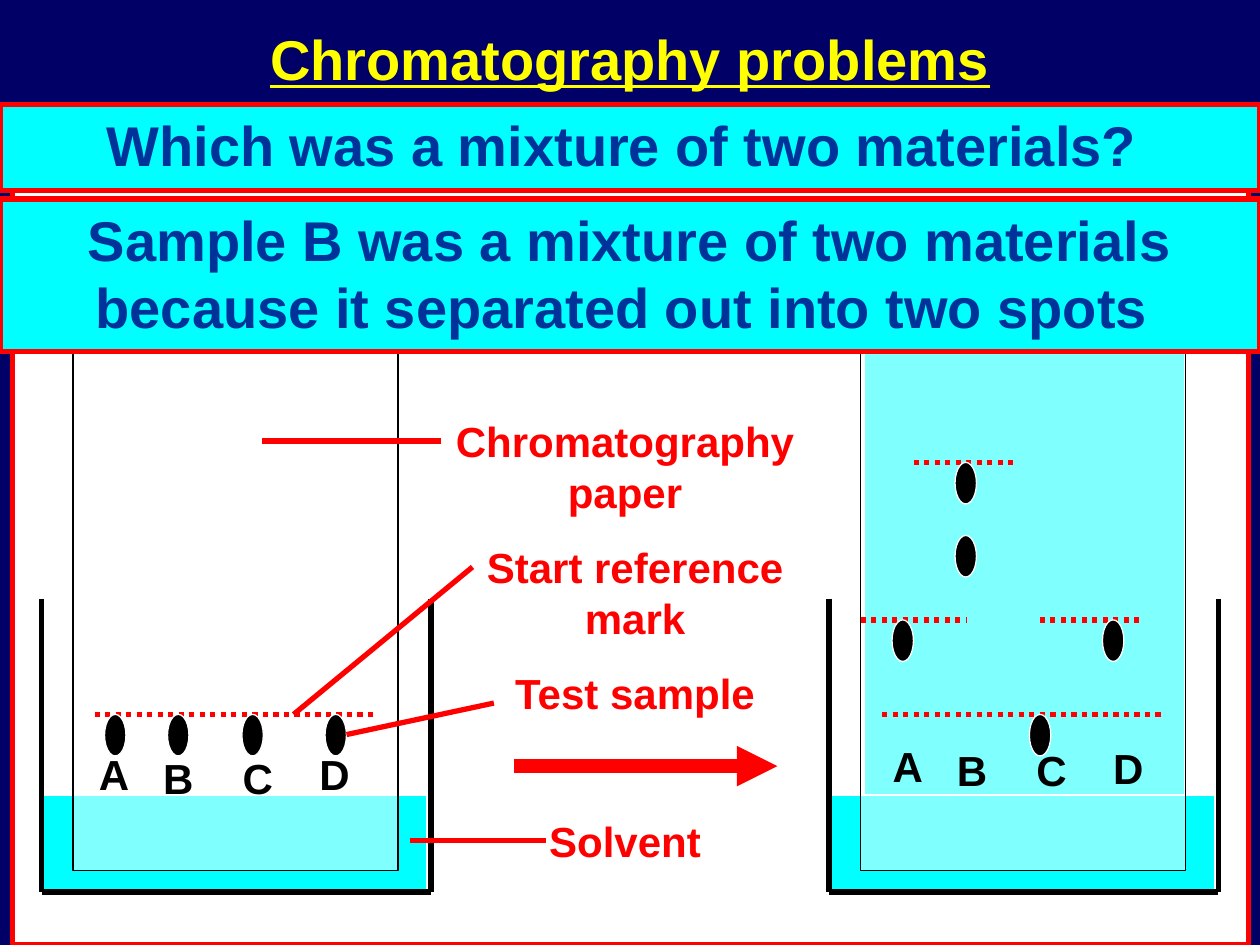
from dataclasses import dataclass
from typing import Union

from lxml.etree import SubElement
from pptx import Presentation
from pptx.dml.color import RGBColor
from pptx.enum.dml import MSO_LINE
from pptx.enum.shapes import MSO_CONNECTOR, MSO_SHAPE
from pptx.enum.text import MSO_ANCHOR, MSO_AUTO_SIZE, PP_ALIGN
from pptx.oxml.ns import qn
from pptx.shapes.autoshape import Shape
from pptx.shapes.connector import Connector
from pptx.shapes.shapetree import GroupShapes, SlideShapes
from pptx.util import Inches, Pt

Shapes = Union[SlideShapes, GroupShapes]

NAVY, BLUE, CYAN, RED = "000066", "003399", "00FFFF", "FF0000"
BLACK, WHITE, YELLOW = "000000", "FFFFFF", "FFFF00"
SPOT_W, SPOT_H = 0.17, 0.33
START_Y = 5.67


@dataclass(frozen=True)
class Box:
    x: float
    y: float
    w: float
    h: float


@dataclass(frozen=True)
class Line:
    x1: float
    y1: float
    x2: float
    y2: float


@dataclass(frozen=True)
class Label:
    text: str
    box: Box


@dataclass(frozen=True)
class Beaker:
    x: float
    spots: list[tuple[float, float]]
    marks: list[Line]
    letters: list[Label]
    wet: bool = False


def color(value: str) -> RGBColor:
    return RGBColor.from_string(value)


def add_box(shapes: Shapes, box: Box, fill: str, line: str, width: float = 0.75,
            kind: MSO_SHAPE = MSO_SHAPE.RECTANGLE) -> Shape:
    sp = shapes.add_shape(kind, Inches(box.x), Inches(box.y), Inches(box.w), Inches(box.h))
    sp.shadow.inherit = False
    sp.fill.solid()
    sp.fill.fore_color.rgb = color(fill)
    sp.line.color.rgb = color(line)
    sp.line.width = Pt(width)
    return sp


def add_line(shapes: Shapes, line: Line, hue: str, width: float = 3,
             dotted: bool = False) -> Connector:
    cx = shapes.add_connector(MSO_CONNECTOR.STRAIGHT, Inches(line.x1), Inches(line.y1),
                              Inches(line.x2), Inches(line.y2))
    cx.line.color.rgb = color(hue)
    cx.line.width = Pt(width)
    if dotted:
        cx.line.dash_style = MSO_LINE.ROUND_DOT
    SubElement(cx._element.spPr, qn("a:effectLst"))
    return cx


def write(sp: Shape, text: str, size: float, hue: str) -> None:
    tf = sp.text_frame
    tf.word_wrap = True
    tf.auto_size = MSO_AUTO_SIZE.SHAPE_TO_FIT_TEXT
    tf.vertical_anchor = MSO_ANCHOR.TOP
    p = tf.paragraphs[0]
    p.text = text
    p.alignment = PP_ALIGN.CENTER
    p.font.name = "Arial"
    p.font.size = Pt(size)
    p.font.bold = True
    p.font.color.rgb = color(hue)


def add_text(shapes: Shapes, label: Label, size: float, hue: str) -> Shape:
    b = label.box
    sp = shapes.add_textbox(Inches(b.x), Inches(b.y), Inches(b.w), Inches(b.h))
    write(sp, label.text, size, hue)
    return sp


def add_banner(shapes: Shapes, label: Label) -> None:
    write(add_box(shapes, label.box, CYAN, RED, 3), label.text, 32, BLUE)


def add_beaker(shapes: Shapes, beaker: Beaker) -> None:
    left, right, top, bottom = beaker.x, beaker.x + 3.09, 4.75, 7.08
    if beaker.wet:
        add_box(shapes, Box(left + 0.28, 2.44, 2.54, 4.44), CYAN, WHITE)
    add_box(shapes, Box(left, 6.31, 3.06, 0.75), CYAN, WHITE)
    for wall in (Line(left, bottom, right, bottom), Line(left, top, left, bottom),
                 Line(right, top, right, bottom)):
        add_line(shapes, wall, BLACK)

    paper = add_box(shapes, Box(left + 0.25, 2.08, 2.58, 4.83), WHITE, BLACK)
    fill = paper._element.spPr.find(qn("a:solidFill"))
    SubElement(fill[0], qn("a:alpha"), val="50000")

    start = Line(left + 0.42, START_Y, left + 2.67, START_Y)
    for mark in [start, *beaker.marks]:
        add_line(shapes, mark, RED, dotted=True)
    for x, y in beaker.spots:
        add_box(shapes, Box(x, y, SPOT_W, SPOT_H), BLACK, WHITE, kind=MSO_SHAPE.OVAL)
    for letter in beaker.letters:
        add_text(shapes, letter, 24, BLACK)


def letters(places: list[tuple[float, float]]) -> list[Label]:
    return [Label(name, Box(x, y, 0.75, 0.5)) for name, (x, y) in zip("ABCD", places)]


BEFORE = Beaker(
    0.33,
    [(x, START_Y) for x in (0.83, 1.33, 1.92, 2.58)],
    [],
    letters([(0.53, 5.89), (1.04, 5.92), (1.67, 5.92), (2.28, 5.89)]),
)
AFTER = Beaker(
    6.58,
    [(7.08, 4.92), (7.58, 3.67), (7.58, 4.25), (8.17, START_Y), (8.75, 4.92)],
    [Line(6.83, 4.92, 7.67, 4.92), Line(8.25, 4.92, 9.08, 4.92), Line(7.25, 3.67, 8.08, 3.67)],
    letters([(6.83, 5.83), (7.34, 5.86), (7.97, 5.86), (8.58, 5.84)]),
    wet=True,
)
CAPTIONS = [
    Label("Chromatography paper", Box(3.5, 3.25, 2.92, 0.9)),
    Label("Solvent", Box(3.5, 6.42, 2.92, 0.5)),
    Label("Start reference mark", Box(3.58, 4.25, 2.92, 0.9)),
    Label("Test sample", Box(3.58, 5.25, 2.92, 0.5)),
]
LEADERS = [
    Line(3.5, 3.5, 2.08, 3.5),
    Line(3.75, 4.5, 2.33, START_Y),
    Line(3.92, 5.58, 2.75, 5.83),
    Line(4.33, 6.67, 3.25, 6.67),
]
BANNERS = [
    Label("Which was a mixture of two materials? ", Box(0, 0.83, 10, 0.68)),
    Label("Sample B was a mixture of two materials because it separated out into two spots ",
          Box(0, 1.58, 10, 1.21)),
]


def main() -> None:
    prs = Presentation()
    prs.slide_width, prs.slide_height = Inches(10), Inches(7.5)
    s = prs.slides.add_slide(prs.slide_layouts[6])
    s.background.fill.solid()
    s.background.fill.fore_color.rgb = color(NAVY)

    title = add_text(s.shapes, Label("Chromatography problems", Box(0, 0, 10, 0.92)), 32, YELLOW)
    title.text_frame.auto_size = MSO_AUTO_SIZE.NONE
    title.text_frame.vertical_anchor = MSO_ANCHOR.MIDDLE
    title.text_frame.paragraphs[0].font.underline = True

    before = s.shapes.add_group_shape().shapes
    add_box(before, Box(0.1, 0.83, 9.81, 6.67), WHITE, RED, 3)
    add_beaker(before, BEFORE)
    for caption in CAPTIONS:
        add_text(s.shapes, caption, 24, RED)
    for leader in LEADERS:
        add_line(s.shapes, leader, RED)
    add_beaker(s.shapes.add_group_shape().shapes, AFTER)
    for banner in BANNERS:
        add_banner(s.shapes, banner)

    arrow = add_line(s.shapes, Line(4.08, 6.08, 6.17, 6.08), RED, 7.75)
    SubElement(arrow.line._get_or_add_ln(), qn("a:tailEnd"), type="triangle")

    prs.save("out.pptx")


if __name__ == "__main__":
    main()
